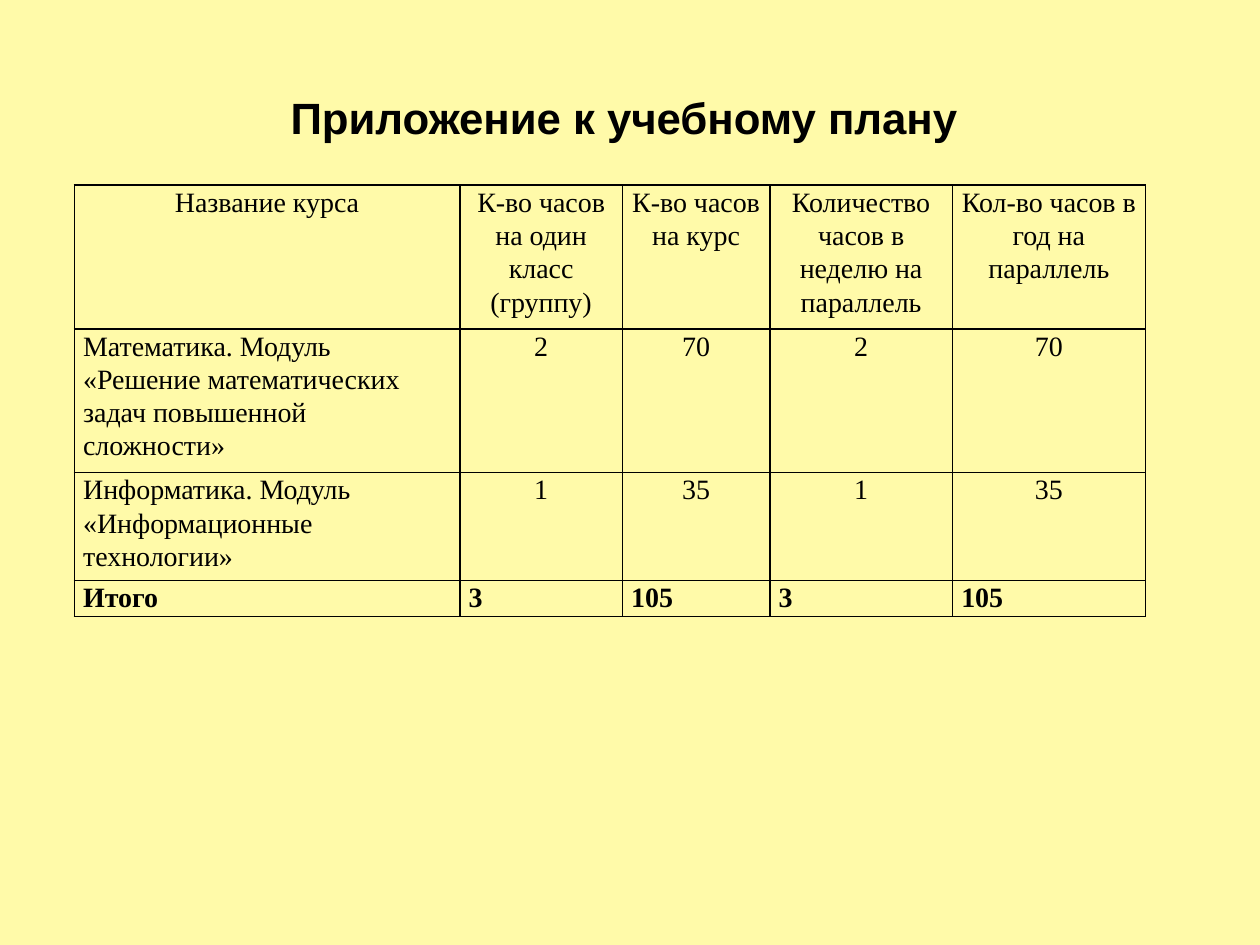
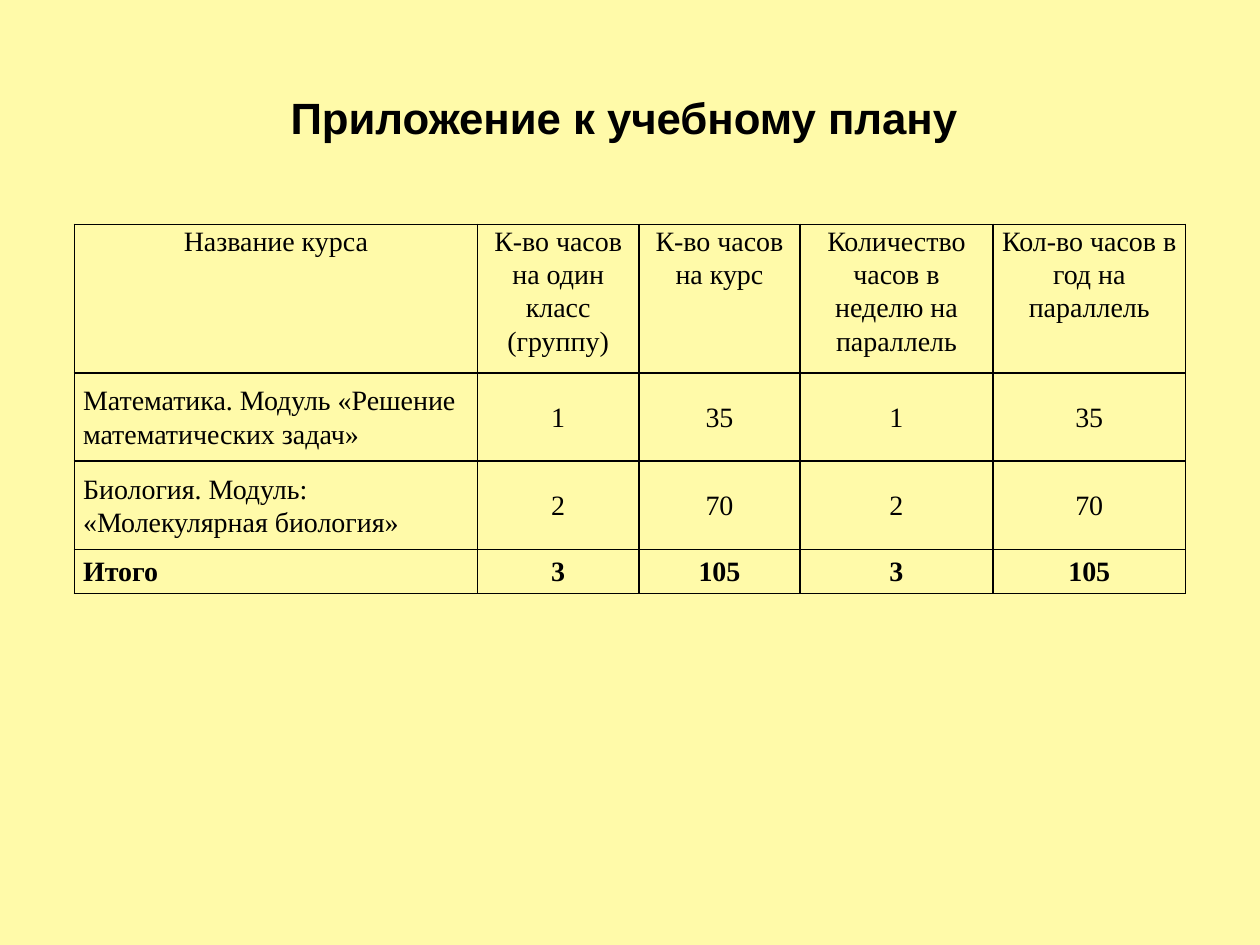
from lxml import etree
from pptx import Presentation
from pptx.dml.color import RGBColor
from pptx.enum.text import MSO_ANCHOR, PP_ALIGN
from pptx.oxml.ns import qn
from pptx.util import Inches, Pt

LEFT, CENTER = PP_ALIGN.LEFT, PP_ALIGN.CENTER
TOP, MIDDLE = MSO_ANCHOR.TOP, MSO_ANCHOR.MIDDLE
COLS, ROWS = 100, 75
TITLE = "Приложение к учебному плану "


def color(code):
    return RGBColor.from_string(code)


class Deck:
    paper, ink = "FFFAA9", "000000"
    head_font, body_font = "Arial", "Times New Roman"

    def __init__(self):
        self.file = Presentation()
        self.file.slide_width = Inches(10)
        self.file.slide_height = Inches(7.5)
        self.slide = None

    def across(self, cols):
        return round(self.file.slide_width * cols / COLS)

    def down(self, rows):
        return round(self.file.slide_height * rows / ROWS)

    def page(self):
        self.slide = self.file.slides.add_slide(self.file.slide_layouts[6])
        fill = self.slide.background.fill
        fill.solid()
        fill.fore_color.rgb = color(self.paper)

    def style(self, frame, face, size, bold, align):
        for para in frame.paragraphs:
            para.alignment = align
            for run in para.runs:
                font = run.font
                font.name, font.size, font.bold = face, Pt(size), bold
                font.color.rgb = color(self.ink)

    def title(self, text):
        box = self.slide.shapes.add_textbox(
            self.across(5), self.down(3), self.across(90), self.down(12.5))
        frame = box.text_frame
        frame.word_wrap = True
        frame.vertical_anchor = MIDDLE
        frame.text = text
        self.style(frame, self.head_font, 25, True, CENTER)

    def border(self, cell):
        props = cell._tc.get_or_add_tcPr()
        for side in ("lnL", "lnR", "lnT", "lnB"):
            line = etree.SubElement(props, qn(f"a:{side}"), w=str(Pt(1)))
            fill = etree.SubElement(line, qn("a:solidFill"))
            etree.SubElement(fill, qn("a:srgbClr"), val=self.ink)

    def cell(self, cell, text, bold, align, anchor):
        self.border(cell)
        cell.fill.background()
        cell.margin_left = cell.margin_right = self.across(0.7)
        cell.margin_top = cell.margin_bottom = 0
        cell.vertical_anchor = anchor
        cell.text_frame.text = text
        self.style(cell.text_frame, self.body_font, 16, bold, align)
        for para in cell.text_frame.paragraphs:
            para.line_spacing = 1.07

    def table(self, top, widths, heights, data, anchor, total):
        grid = self.slide.shapes.add_table(
            len(data), len(widths), self.across(5.9), self.down(top),
            self.across(sum(widths)), self.down(sum(heights))).table
        grid.first_row = grid.horz_banding = False
        for col, width in zip(grid.columns, widths):
            col.width = self.across(width)
        for row, height in zip(grid.rows, heights):
            row.height = self.down(height)
        last = len(data) - 1
        for r, line in enumerate(data):
            for c, text in enumerate(line):
                align = total if r == last else CENTER
                if c == 0 and r > 0:
                    align = LEFT
                self.cell(grid.cell(r, c), text, r == last, align,
                          anchor if r else TOP)


def heads(group):
    return ["Название курса", group, "К-во часов на курс",
            "Количество часов в неделю на параллель",
            "Кол-во часов в год на параллель"]


def course(name, week, year):
    return [name] + [str(week), str(year)] * 2


def main():
    deck = Deck()
    deck.page()
    deck.title(TITLE)
    deck.table(
        14.7, [30.6, 12.9, 11.7, 14.5, 15.3],
        [2.64 * lines for lines in (4, 4, 3, 1)],
        [heads("К-во часов на один класс (группу)"),
         course("Математика. Модуль «Решение математических задач "
                "повышенной сложности»", 2, 70),
         course("Информатика. Модуль «Информационные технологии»", 1, 35),
         course("Итого", 3, 105)], TOP, LEFT)

    deck.page()
    deck.title(TITLE)
    deck.table(
        17.8, [32, 12.8, 12.8, 15.3, 15.3], [11.8, 7, 7, 3.5],
        [heads("К-во часов на один класс\v(группу)"),
         course("Математика. Модуль «Решение математических задач»", 1, 35),
         course("Биология. Модуль: «Молекулярная биология»", 2, 70),
         course("Итого", 3, 105)], MIDDLE, CENTER)
    deck.file.save("out.pptx")


if __name__ == "__main__":
    main()
